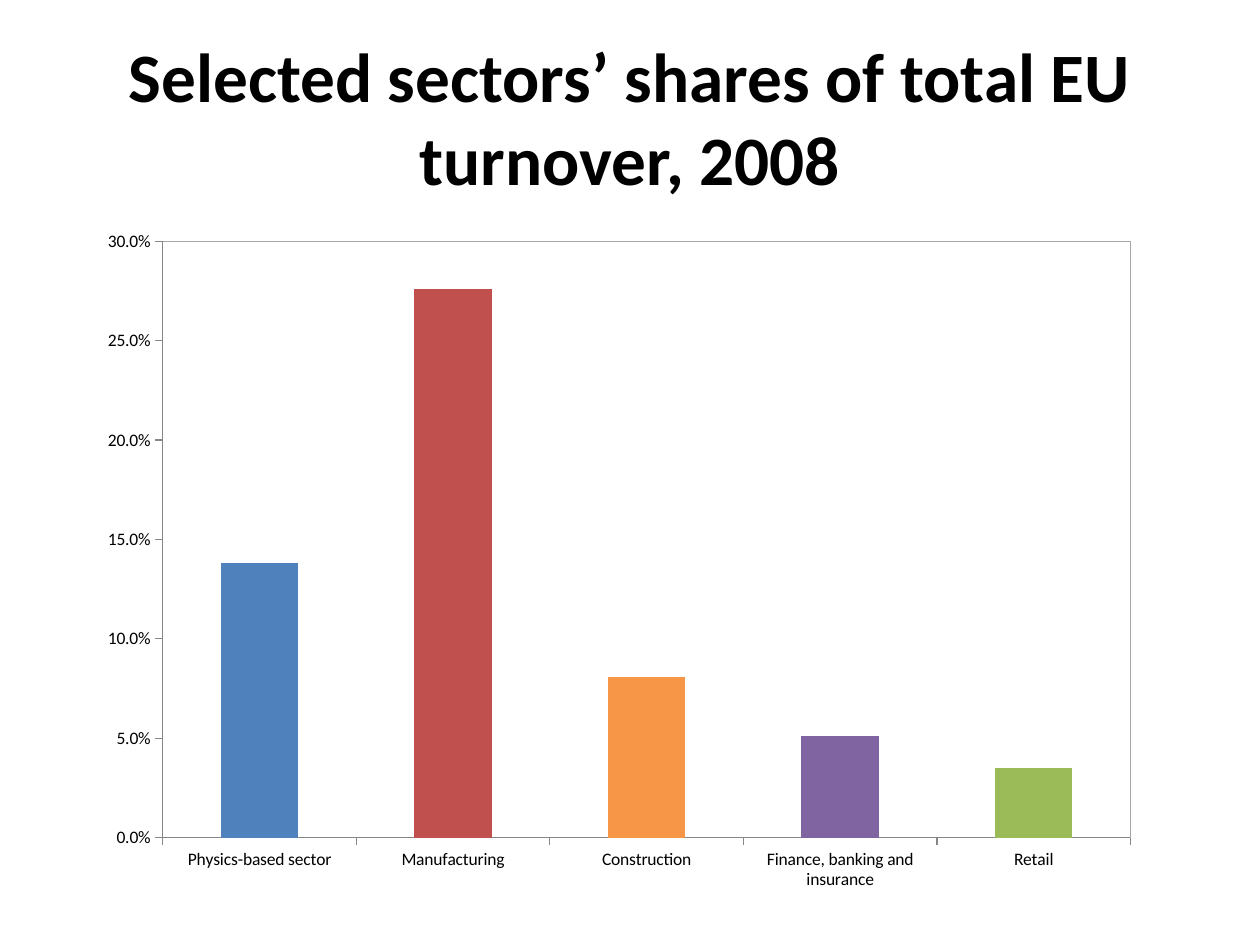
from dataclasses import dataclass

from lxml import etree
from pptx import Presentation
from pptx.chart.data import CategoryChartData
from pptx.dml.color import RGBColor
from pptx.enum.chart import XL_CHART_TYPE, XL_TICK_MARK
from pptx.enum.text import MSO_ANCHOR, PP_ALIGN
from pptx.oxml import parse_xml
from pptx.oxml.ns import nsdecls, qn
from pptx.util import Cm, Pt

COLUMNS = XL_CHART_TYPE.COLUMN_CLUSTERED
TICK_OUTSIDE = XL_TICK_MARK.OUTSIDE
TICK_NONE = XL_TICK_MARK.NONE
CENTER = PP_ALIGN.CENTER
MIDDLE = MSO_ANCHOR.MIDDLE
TITLE_ONLY = 5


@dataclass(frozen=True)
class Theme:
    font: str = "Calibri"
    title_size: float = 39.6
    chart_size: float = 18
    axis_size: float = 10
    text: str = "000000"
    axis_line: str = "868686"
    plot_border: str = "A6A6A6"


THEME = Theme()

# Sector, share of turnover, column colour
SECTORS = [
    ("Physics-based sector", 0.138, "4F81BD"),
    ("Manufacturing", 0.276, "C0504D"),
    ("Construction", 0.081, "F79646"),
    ("Finance, banking and insurance", 0.051, "8064A2"),
    ("Retail", 0.035, "9BBB59"),
]


def format_font(font, size):
    font.name = THEME.font
    font.size = Pt(size)
    font.color.rgb = RGBColor.from_string(THEME.text)


def add_title(slide, text):
    title = slide.shapes.title
    title.left, title.top = Cm(1.27), Cm(0.76)
    title.width, title.height = Cm(22.86), Cm(3.18)
    frame = title.text_frame
    frame.word_wrap = True
    frame.vertical_anchor = MIDDLE
    paragraph = frame.paragraphs[0]
    paragraph.alignment = CENTER
    run = paragraph.add_run()
    run.text = text
    format_font(run.font, THEME.title_size)
    run.font.bold = True


def format_axis(axis):
    axis.has_major_gridlines = False
    axis.major_tick_mark = TICK_OUTSIDE
    axis.minor_tick_mark = TICK_NONE
    axis.format.line.color.rgb = RGBColor.from_string(THEME.axis_line)
    axis.format.line.width = Pt(0.75)
    format_font(axis.tick_labels.font, THEME.axis_size)


def frame_plot_area(chart, left, top, width, height):
    """Place the inner plot area, in fractions of the chart, and outline it."""
    plot_area = chart._chartSpace.find(".//" + qn("c:plotArea"))
    for layout in plot_area.findall(qn("c:layout")):
        plot_area.remove(layout)
    layout = parse_xml(f"<c:layout {nsdecls('c')}><c:manualLayout/></c:layout>")
    settings = {"layoutTarget": "inner", "xMode": "edge", "yMode": "edge",
                "x": left, "y": top, "w": width, "h": height}
    for name, value in settings.items():
        etree.SubElement(layout[0], qn(f"c:{name}"), val=str(value))
    plot_area.insert(0, layout)
    plot_area.append(parse_xml(
        f"<c:spPr {nsdecls('c', 'a')}><a:noFill/><a:ln w='9525'><a:solidFill>"
        f"<a:srgbClr val='{THEME.plot_border}'/></a:solidFill></a:ln></c:spPr>"))


def add_share_chart(slide, sectors):
    data = CategoryChartData(number_format="0.0%")
    data.categories = [name for name, _, _ in sectors]
    data.add_series("Series 1", [share for _, share, _ in sectors])
    chart = slide.shapes.add_chart(
        COLUMNS, Cm(1.78), Cm(4.45), Cm(21.44), Cm(13.82), data).chart
    chart.has_legend = False
    chart.has_title = False
    format_font(chart.font, THEME.chart_size)

    # Columns, one colour per sector
    plot = chart.plots[0]
    plot.gap_width = 150
    plot.vary_by_categories = False
    series = plot.series[0]
    for index, (_, _, color) in enumerate(sectors):
        fill = series.points[index].format.fill
        fill.solid()
        fill.fore_color.rgb = RGBColor.from_string(color)

    # Axes
    format_axis(chart.category_axis)
    value_axis = chart.value_axis
    format_axis(value_axis)
    value_axis.minimum_scale = 0
    value_axis.maximum_scale = 0.3
    value_axis.major_unit = 0.05
    value_axis.tick_labels.number_format = "0.0%"
    value_axis.tick_labels.number_format_is_linked = False
    frame_plot_area(chart, 0.07, 0.03, 0.91, 0.87)


def main():
    presentation = Presentation()
    presentation.slide_width, presentation.slide_height = Cm(25.4), Cm(19.05)
    slide = presentation.slides.add_slide(presentation.slide_layouts[TITLE_ONLY])
    add_title(slide, "Selected sectors’ shares of total EU turnover, 2008")
    add_share_chart(slide, SECTORS)
    presentation.save("out.pptx")


if __name__ == "__main__":
    main()
